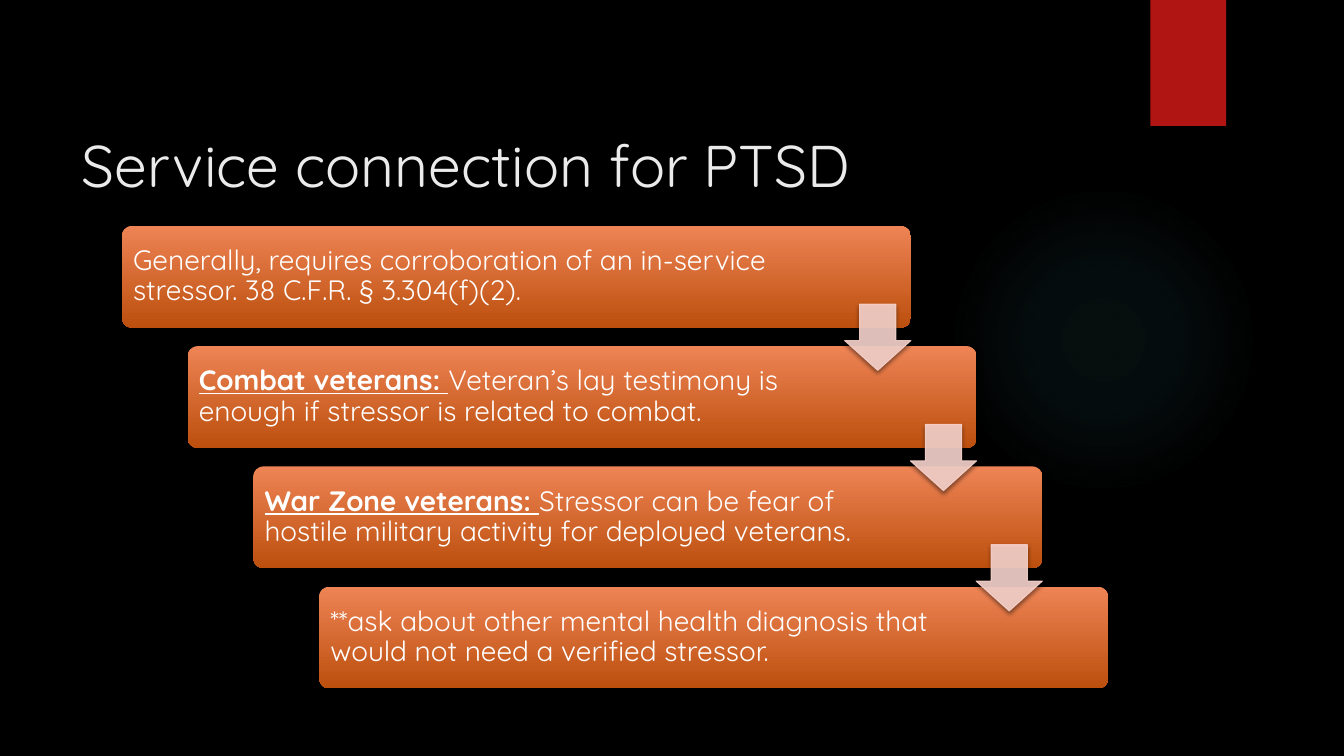
from collections import namedtuple
from dataclasses import dataclass

from pptx import Presentation
from pptx.dml.color import RGBColor
from pptx.enum.shapes import MSO_SHAPE
from pptx.enum.text import MSO_ANCHOR, MSO_AUTO_SIZE, PP_ALIGN
from pptx.oxml import parse_xml
from pptx.oxml.ns import nsdecls, qn
from pptx.util import Inches, Pt

OVAL, RECTANGLE = MSO_SHAPE.OVAL, MSO_SHAPE.RECTANGLE
ROUNDED, DOWN_ARROW = MSO_SHAPE.ROUNDED_RECTANGLE, MSO_SHAPE.DOWN_ARROW
MIDDLE, BOTTOM = MSO_ANCHOR.MIDDLE, MSO_ANCHOR.BOTTOM
LEFT, NO_FIT = PP_ALIGN.LEFT, MSO_AUTO_SIZE.NONE

Box = namedtuple("Box", "left top width height")


@dataclass(frozen=True)
class Theme:
    """Colours, font and type sizes of the deck."""
    background: str = "000000"
    glow: str = "50B9C1"
    ribbon: str = "B01513"
    title: str = "EBEBEB"
    text: str = "FFFFFF"
    step_top: str = "EE8455"
    step_bottom: str = "BC4F0E"
    arrow: str = "F7D3CC"
    shadow: str = "000000"
    font: str = "Quicksand"
    title_size: int = 42
    text_size: int = 20


THEME = Theme()
LINEAR = '<a:lin ang="5400000" scaled="0"/>'
RADIAL = ('<a:path path="circle"><a:fillToRect l="50000" t="50000" '
          'r="50000" b="50000"/></a:path>')

STEPS = [
    ("", "Generally, requires corroboration of an in-service stressor. "
         "38 C.F.R. § 3.304(f)(2)."),
    ("Combat veterans: ", "Veteran’s lay testimony is enough if stressor "
                          "is related to combat."),
    ("War Zone veterans: ", "Stressor can be fear of hostile military "
                            "activity for deployed veterans."),
    ("", "**ask about other mental health diagnosis that would not need "
         "a verified stressor."),
]


def add_plain(slide, kind, box, color):
    """Add a borderless, shadowless shape in one colour."""
    shape = slide.shapes.add_shape(kind, *(Inches(length) for length in box))
    shape.shadow.inherit = False
    shape.fill.solid()
    shape.fill.fore_color.rgb = RGBColor.from_string(color)
    shape.line.fill.background()
    return shape


def set_gradient(shape, stops, direction):
    """Fill a shape with (position, colour, opacity) stops, in percent."""
    marks = "".join(
        f'<a:gs pos="{position * 1000}"><a:srgbClr val="{color}">'
        f'<a:alpha val="{opacity * 1000}"/></a:srgbClr></a:gs>'
        for position, color, opacity in stops)
    properties = shape.element.spPr
    properties.replace(properties.find(qn("a:solidFill")), parse_xml(
        f'<a:gradFill {nsdecls("a")} rotWithShape="1">'
        f'<a:gsLst>{marks}</a:gsLst>{direction}</a:gradFill>'))


def set_shadow(shape, opacity, blur, distance):
    """Cast a shadow straight down, with lengths in points."""
    shape.element.spPr.find(qn("a:effectLst")).append(parse_xml(
        f'<a:outerShdw {nsdecls("a")} blurRad="{Pt(blur)}" '
        f'dist="{Pt(distance)}" dir="5400000" rotWithShape="0">'
        f'<a:srgbClr val="{THEME.shadow}"><a:alpha val="{opacity * 1000}"/>'
        '</a:srgbClr></a:outerShdw>'))


def add_text(para, text, *, size, color, strong=False):
    """Append a span of formatted text to a paragraph."""
    span = para.add_run()
    span.text = text
    span.font.name = THEME.font
    span.font.size = Pt(size)
    span.font.color.rgb = RGBColor.from_string(color)
    span.font.bold = span.font.underline = strong


def draw_backdrop(slide, box):
    """Paint the background, the soft glow and the ribbon."""
    slide.background.fill.solid()
    slide.background.fill.fore_color.rgb = RGBColor.from_string(THEME.background)
    glow_size = box.height * 0.41
    glow = add_plain(slide, OVAL, Box(box.width * 0.706, box.height * 0.244,
                                      glow_size, glow_size), THEME.glow)
    set_gradient(glow, [(0, THEME.glow, 7), (36, THEME.glow, 6),
                        (69, THEME.glow, 0)], RADIAL)
    ribbon = add_plain(slide, RECTANGLE, Box(box.width * 0.856, box.top,
                                             0.75, box.height / 6), THEME.ribbon)
    set_shadow(ribbon, 45, 3, 2)


def fill_title(slide, box, text):
    """Place and format the title placeholder."""
    title = slide.shapes.title
    title.left, title.top, title.width, title.height = map(Inches, box)
    frame = title.text_frame
    frame.auto_size = NO_FIT
    frame.vertical_anchor = BOTTOM
    para = frame.paragraphs[0]
    para.alignment = LEFT
    add_text(para, text, size=THEME.title_size, color=THEME.title)


def draw_step(slide, box, heading, text):
    """Draw one step of the staircase with its text."""
    step = add_plain(slide, ROUNDED, box, THEME.step_top)
    step.adjustments[0] = 0.1
    set_gradient(step, [(0, THEME.step_top, 100),
                        (100, THEME.step_bottom, 100)], LINEAR)
    set_shadow(step, 60, 5, 3)
    frame = step.text_frame
    frame.word_wrap = True
    frame.vertical_anchor = MIDDLE
    frame.margin_left = frame.margin_top = frame.margin_bottom = Inches(0.08)
    frame.margin_right = Inches(box.width / 6)
    para = frame.paragraphs[0]
    para.alignment = LEFT
    para.line_spacing = 0.9
    if heading:
        add_text(para, heading, size=THEME.text_size, color=THEME.text, strong=True)
    add_text(para, text, size=THEME.text_size, color=THEME.text)


def draw_arrow(slide, step):
    """Draw the arrow that leads down from a step's right end."""
    size = step.height * 0.65
    arrow = add_plain(slide, DOWN_ARROW,
                      Box(step.left + step.width - size,
                          step.top + step.height * 0.77, size, size), THEME.arrow)
    arrow.adjustments[0], arrow.adjustments[1] = 0.55, 0.45
    arrow.line.color.rgb = RGBColor.from_string(THEME.arrow)
    arrow.line.width = Pt(0.75)
    for color in arrow.element.spPr.iter(qn("a:srgbClr")):
        color.append(parse_xml(f'<a:alpha {nsdecls("a")} val="90000"/>'))
    set_shadow(arrow, 45, 3, 2)


def draw_staircase(slide, box, steps):
    """Spread the steps diagonally over the box and join them by arrows."""
    width, height = box.width * 0.8, box.height * 0.22
    gaps = len(steps) - 1
    across, down = (box.width - width) / gaps, (box.height - height) / gaps
    places = [Box(box.left + across * index, box.top + down * index, width, height)
              for index in range(len(steps))]
    for place, (heading, text) in zip(places, steps):
        draw_step(slide, place, heading, text)
    for place in places[:-1]:
        draw_arrow(slide, place)


def main():
    """Build the deck and save it."""
    deck = Presentation()
    page = Box(0, 0, 13.33, 7.5)
    deck.slide_width, deck.slide_height = Inches(page.width), Inches(page.height)
    slide = deck.slides.add_slide(deck.slide_layouts[5])
    draw_backdrop(slide, page)
    fill_title(slide, Box(0.71, 0.5, 10.29, 1.53), "Service connection for PTSD")
    draw_staircase(slide, Box(1.21, 2.24, 9.78, 4.59), STEPS)
    deck.save("out.pptx")


if __name__ == "__main__":
    main()
